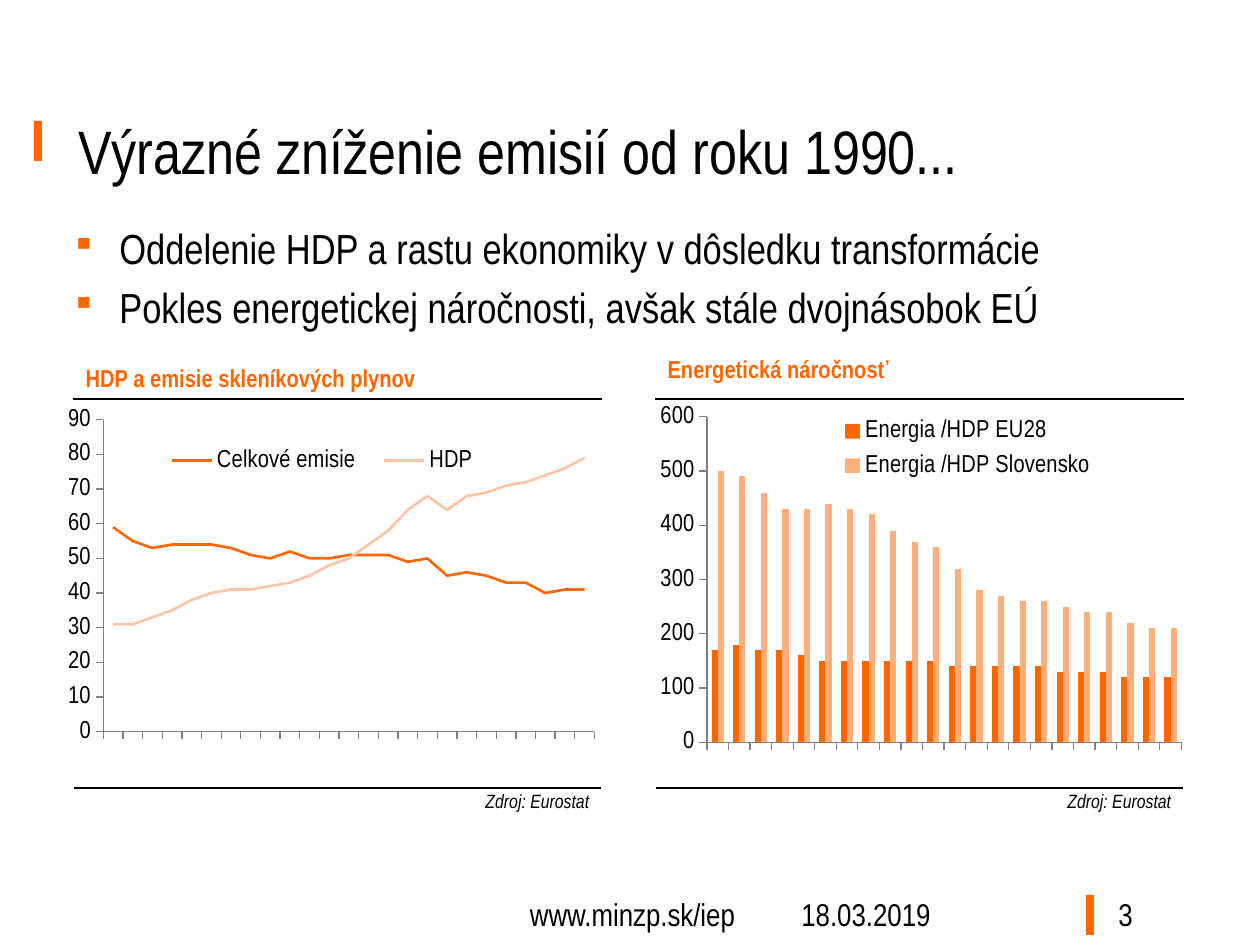
import lxml.etree
import pptx
import pptx.chart.data
import pptx.dml.color
import pptx.enum.chart
import pptx.enum.shapes
import pptx.enum.text
import pptx.oxml
import pptx.oxml.ns
import pptx.util

RGB = pptx.dml.color.RGBColor
ORANGE = RGB(0xFF, 0x66, 0x00)
PEACH = RGB(0xFF, 0xC4, 0xA3)
SAND = RGB(0xFF, 0xAF, 0x79)
BLACK = RGB(0, 0, 0)
WHITE = RGB(0xFF, 0xFF, 0xFF)
GREY = RGB(0x80, 0x80, 0x80)
FONT = "Arial Narrow"
SCALE = 914400 // 126  # EMU per px
KIND = pptx.enum.chart.XL_CHART_TYPE
ALIGN = pptx.enum.text.PP_ALIGN
ANCHOR = pptx.enum.text.MSO_ANCHOR
PLACE = pptx.enum.chart.XL_LEGEND_POSITION
TICK = pptx.enum.chart.XL_TICK_MARK
qn = pptx.oxml.ns.qn

TOTAL = [59, 55, 53, 54, 54, 54, 53, 51, 50, 52, 50, 50, 51,
         51, 51, 49, 50, 45, 46, 45, 43, 43, 40, 41, 41]
GDP = [31, 31, 33, 35, 38, 40, 41, 41, 42, 43, 45, 48, 50,
       54, 58, 64, 68, 64, 68, 69, 71, 72, 74, 76, 79]
UNION = [170, 180, 170, 170, 160, 150, 150, 150, 150, 150, 150,
         140, 140, 140, 140, 140, 130, 130, 130, 120, 120, 120]
SLOVAK = [500, 490, 460, 430, 430, 440, 430, 420, 390, 370, 360,
          320, 280, 270, 260, 260, 250, 240, 240, 220, 210, 210]


def px(*sizes):
    return [pptx.util.Emu(size * SCALE) for size in sizes]


def style(para, size, color=BLACK, bold=False, italic=False):
    for run in para.runs:
        font = run.font
        font.name, font.size = FONT, pptx.util.Pt(size)
        font.bold, font.italic = bold, italic
        font.color.rgb = color


def add_bar(slide, *box):
    bar = slide.shapes.add_shape(
        pptx.enum.shapes.MSO_SHAPE.RECTANGLE, *px(*box))
    bar.shadow.inherit = False
    bar.fill.solid()
    bar.fill.fore_color.rgb = ORANGE
    bar.line.fill.background()


def add_text(slide, box, text, size, align=ALIGN.LEFT, anchor=ANCHOR.TOP):
    frame = slide.shapes.add_textbox(*px(*box)).text_frame
    frame.word_wrap = True
    frame.vertical_anchor = anchor
    frame.text = text
    for para in frame.paragraphs:
        para.alignment = align
        style(para, size)
    return frame


def add_list(slide, box, lines):
    frame = add_text(slide, box, "\n".join(lines), 24)
    for index, para in enumerate(frame.paragraphs):
        props = para._p.get_or_add_pPr()
        indent = px(48)[0]
        props.set("marL", str(indent))
        props.set("indent", str(-indent))
        color = lxml.etree.SubElement(props, qn("a:buClr"))
        lxml.etree.SubElement(color, qn("a:srgbClr"), val=str(ORANGE))
        lxml.etree.SubElement(props, qn("a:buSzPct"), val="80000")
        lxml.etree.SubElement(props, qn("a:buChar"), char="▪")
        if index:
            para.space_before = pptx.util.Pt(5)


def set_edges(cell, edges):
    props = cell._tc.get_or_add_tcPr()
    for index, side in enumerate("LRTB"):
        line = lxml.etree.Element(qn("a:ln" + side), w="12700")
        if side in edges:
            fill = lxml.etree.SubElement(line, qn("a:solidFill"))
            lxml.etree.SubElement(fill, qn("a:srgbClr"), val=str(edges[side]))
        else:
            lxml.etree.SubElement(line, qn("a:noFill"))
        props.insert(index, line)


def add_frame(slide):
    table = slide.shapes.add_table(3, 3, *px(73, 354, 1111, 481)).table
    table.first_row = table.horz_banding = False
    for col, width in zip(table.columns, px(529, 53, 529)):
        col.width = width
    for row, height in zip(table.rows, px(45, 389, 47)):
        row.height = height
    heads = {0: "HDP a emisie skleníkových plynov", 2: "Energetická náročnosť"}
    sides = dict.fromkeys("LRB", WHITE)
    edges = [{"B": BLACK}, {"T": BLACK, "B": BLACK}, {**sides, "T": BLACK}]
    for r in range(3):
        for c in range(3):
            cell = table.cell(r, c)
            cell.fill.background()
            para = cell.text_frame.paragraphs[0]
            if c == 1 or r == 1:
                cell.margin_top = cell.margin_bottom = 0
            elif r == 0:
                para.text = heads[c]
                style(para, 14, ORANGE, bold=True)
            else:
                para.text = "Zdroj: Eurostat"
                para.alignment = ALIGN.RIGHT
                style(para, 11, italic=True)
            if c == 1:
                set_edges(cell, sides if r == 2 else {})
            else:
                set_edges(cell, edges[r])
    table.cell(0, 0).vertical_anchor = ANCHOR.BOTTOM


def set_layout(parent, index, spots, inner=False):
    for old in parent.findall(qn("c:layout")):
        parent.remove(old)
    layout = lxml.etree.Element(qn("c:layout"))
    manual = lxml.etree.SubElement(layout, qn("c:manualLayout"))
    if inner:
        lxml.etree.SubElement(manual, qn("c:layoutTarget"), val="inner")
    for name in ("xMode", "yMode"):
        lxml.etree.SubElement(manual, qn("c:" + name), val="edge")
    for name, spot in zip("xywh", spots):
        lxml.etree.SubElement(manual, qn("c:" + name), val=str(spot))
    parent.insert(index, layout)


def add_graph(slide, kind, box, start, series, top, step, plot, place, key):
    data = pptx.chart.data.CategoryChartData()
    count = len(series[0][1])
    data.categories = [str(start + i) for i in range(count)]
    for name, vals, _ in series:
        data.add_series(name, vals)
    chart = slide.shapes.add_chart(kind, *px(*box), data).chart
    chart.has_title = False
    chart.font.name, chart.font.size = FONT, pptx.util.Pt(14)
    chart.font.color.rgb = BLACK
    # Axes
    for axis in (chart.category_axis, chart.value_axis):
        axis.has_major_gridlines = False
        axis.major_tick_mark = TICK.OUTSIDE
        axis.minor_tick_mark = TICK.NONE
        axis.format.line.color.rgb = GREY
    chart.category_axis.tick_label_position = (
        pptx.enum.chart.XL_TICK_LABEL_POSITION.NONE)
    scale = chart.value_axis
    scale.minimum_scale, scale.maximum_scale = 0, top
    scale.major_unit = step
    scale.tick_labels.number_format = "0"
    scale.tick_labels.number_format_is_linked = False
    # Series
    chart.plots[0].vary_by_categories = False
    for item, (_, _, color) in zip(chart.plots[0].series, series):
        if kind == KIND.LINE:
            item.smooth = False
            item.marker.style = pptx.enum.chart.XL_MARKER_STYLE.NONE
            item.format.line.color.rgb = color
            item.format.line.width = pptx.util.Pt(1.5)
        else:
            item.format.fill.solid()
            item.format.fill.fore_color.rgb = color
    if kind != KIND.LINE:
        chart.plots[0].gap_width = 150
    # Legend and plot area
    chart.has_legend = True
    chart.legend.position = place
    chart.legend.include_in_layout = kind == KIND.LINE
    set_layout(chart.legend._element, 1, key)
    set_layout(chart._chartSpace.chart.plotArea, 0, plot, inner=True)


def main():
    deck = pptx.Presentation()
    deck.slide_width, deck.slide_height = px(1260, 945)
    slide = deck.slides.add_slide(deck.slide_layouts[6])

    # Accent bars and footer
    add_bar(slide, 1086, 895, 8, 40)
    add_bar(slide, 34, 121, 8, 40)
    add_text(slide, (789, 889, 294, 49), "18.03.2019", 18)
    add_text(slide, (433, 889, 399, 47), "www.minzp.sk/iep", 18, ALIGN.CENTER)
    add_text(slide, (1106, 889, 76, 55), "3", 18)

    # Title and points
    add_text(slide, (66, 106, 1134, 89),
             "Výrazné zníženie emisií od roku 1990...", 35,
             anchor=ANCHOR.MIDDLE)
    add_list(slide, (59, 216, 1123, 645), [
        "Oddelenie HDP a rastu ekonomiky v dôsledku transformácie",
        "Pokles energetickej náročnosti, avšak stále dvojnásobok EÚ"])

    # Table that frames the two charts
    add_frame(slide)
    add_graph(slide, KIND.LINE, (66, 408, 534, 372), 1992,
              [("Celkové emisie", TOTAL, ORANGE), ("HDP", GDP, PEACH)],
              90, 10, (0.07, 0.03, 0.92, 0.84), PLACE.LEFT,
              (0.16, 0.09, 0.64, 0.1))
    add_graph(slide, KIND.COLUMN_CLUSTERED, (660, 393, 522, 397), 1995,
              [("Energia /HDP EU28", UNION, ORANGE),
               ("Energia /HDP Slovensko", SLOVAK, SAND)],
              600, 100, (0.09, 0.06, 0.91, 0.82), PLACE.RIGHT,
              (0.34, 0.04, 0.5, 0.2))
    deck.save("out.pptx")


if __name__ == "__main__":
    main()
